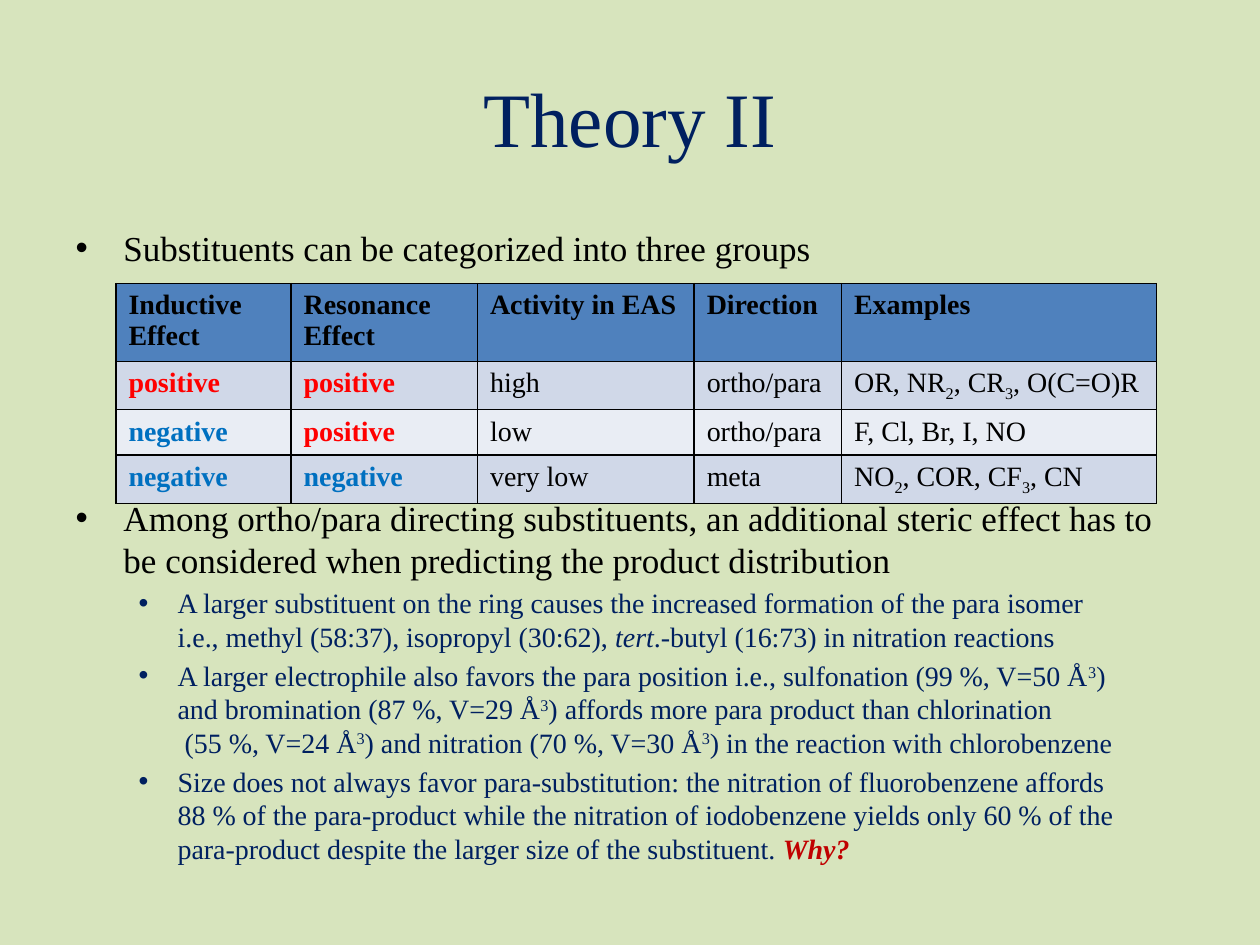
from pptx import Presentation
from pptx.dml.color import RGBColor
from pptx.enum.text import MSO_ANCHOR, MSO_AUTO_SIZE, PP_ALIGN
from pptx.oxml import parse_xml
from pptx.oxml.ns import nsdecls
from pptx.util import Inches, Pt

FONT = "Times New Roman"
BACKGROUND = RGBColor(0xD7, 0xE4, 0xBD)
NAVY = RGBColor(0x00, 0x20, 0x60)
BLACK = RGBColor(0x00, 0x00, 0x00)
DARK_RED = RGBColor(0xC0, 0x00, 0x00)
HEADER_BLUE = RGBColor(0x4F, 0x81, 0xBD)
BANDS = (RGBColor(0xD0, 0xD8, 0xE8), RGBColor(0xE9, 0xED, 0xF4))
EFFECT_COLORS = {"positive": RGBColor(0xFF, 0x00, 0x00),
                 "negative": RGBColor(0x00, 0x70, 0xC0)}

SUB, SUPER = {"baseline": -25}, {"baseline": 30}
CUBED = ("3", SUPER)

HEADERS = ["Inductive Effect", "Resonance Effect", "Activity in EAS", "Direction", "Examples"]
GROUPS = [
    ["positive", "positive", "high", "ortho/para",
     ["OR, NR", ("2", SUB), ", CR", ("3", SUB), ", O(C=O)R"]],
    ["negative", "positive", "low", "ortho/para", "F, Cl, Br, I, NO"],
    ["negative", "negative", "very low", "meta",
     ["NO", ("2", SUB), ", COR, CF", ("3", SUB), ", CN"]],
]
COLUMN_WIDTHS = (1.39, 1.48, 1.72, 1.17, 2.5)
ROW_HEIGHTS = (0.62, 0.36, 0.36, 0.36)

# Level, space before in points, content
TABLE_GAP = 130
BULLETS = [
    (0, 4, "Substituents can be categorized into three groups"),
    (0, TABLE_GAP, "Among ortho/para directing substituents, an additional steric effect has to "
                   "be considered when predicting the product distribution"),
    (1, 3.2, ["A larger substituent on the ring causes the increased formation of the para isomer \n"
              "i.e., methyl (58:37), isopropyl (30:62), ", ("tert", {"italic": True}),
              ".-butyl (16:73) in nitration reactions"]),
    (1, 3.2, ["A larger electrophile also favors the para position i.e., sulfonation (99 %, V=50 Å",
              CUBED, ") \nand bromination (87 %, V=29 Å", CUBED,
              ") affords more para product than chlorination\n (55 %, V=24 Å", CUBED,
              ") and nitration (70 %, V=30 Å", CUBED, ") in the reaction with chlorobenzene"]),
    (1, 3.2, ["Size does not always favor para-substitution: the nitration of fluorobenzene affords \n"
              "88 % of the para-product while the nitration of iodobenzene yields only 60 % of the \n"
              "para-product despite the larger size of the substituent. ",
              ("Why?", {"color": DARK_RED, "bold": True, "italic": True})]),
]
# Size, line pitch, colour, left margin and hanging indent for each level
LEVELS = [(20, 24, BLACK, 0.38, -0.38), (16, 19.15, NAVY, 0.81, -0.31)]


def add_text(paragraph, text, size=16, color=BLACK, bold=False, italic=False, baseline=None):
    for number, line in enumerate(text.split("\n")):
        if number:
            paragraph.add_line_break()
        if not line:
            continue
        run = paragraph.add_run()
        run.text = line
        font = run.font
        font.name, font.size, font.bold, font.italic = FONT, Pt(size), bold, italic
        font.color.rgb = color
        if baseline:
            run._r.get_or_add_rPr().set("baseline", str(baseline * 1000))


def add_pieces(paragraph, content, **style):
    """Add a string, or a list of strings and (text, format) pairs."""
    for piece in [content] if isinstance(content, str) else content:
        text, extra = (piece, {}) if isinstance(piece, str) else piece
        add_text(paragraph, text, **{**style, **extra})


def place(shape, left, top, width, height):
    shape.left, shape.top = Inches(left), Inches(top)
    shape.width, shape.height = Inches(width), Inches(height)


def set_bullet(paragraph, margin, indent):
    properties = paragraph._p.get_or_add_pPr()
    properties.set("marL", str(Inches(margin)))
    properties.set("indent", str(Inches(indent)))
    properties.append(parse_xml(f'<a:buFont {nsdecls("a")} typeface="Arial"/>'))
    properties.append(parse_xml(f'<a:buChar {nsdecls("a")} char="•"/>'))


def set_borders(cell):
    properties = cell._tc.get_or_add_tcPr()
    for position, side in enumerate(("lnL", "lnR", "lnT", "lnB")):
        properties.insert(position, parse_xml(
            f'<a:{side} {nsdecls("a")} w="{Pt(1)}"><a:solidFill>'
            f'<a:srgbClr val="{BLACK}"/></a:solidFill></a:{side}>'))


def fill_title(title, box):
    place(title, *box)
    frame = title.text_frame
    frame.vertical_anchor = MSO_ANCHOR.MIDDLE
    frame.paragraphs[0].alignment = PP_ALIGN.CENTER
    add_text(frame.paragraphs[0], "Theory II", size=44, color=NAVY)


def fill_body(body, box):
    place(body, *box)
    frame = body.text_frame
    frame.word_wrap = True
    frame.auto_size = MSO_AUTO_SIZE.NONE
    for number, (level, space, content) in enumerate(BULLETS):
        paragraph = frame.add_paragraph() if number else frame.paragraphs[0]
        size, pitch, color, margin, indent = LEVELS[level]
        paragraph.level = level
        paragraph.line_spacing = Pt(pitch)
        paragraph.space_before = Pt(space)
        set_bullet(paragraph, margin, indent)
        add_pieces(paragraph, content, size=size, color=color)


def add_groups_table(slide, box):
    rows = [HEADERS] + GROUPS
    table = slide.shapes.add_table(len(rows), len(HEADERS), *map(Inches, box)).table
    for column, width in zip(table.columns, COLUMN_WIDTHS):
        column.width = Inches(width)
    for row, height in zip(table.rows, ROW_HEIGHTS):
        row.height = Inches(height)
    for row_number, contents in enumerate(rows):
        is_header = row_number == 0
        for column_number, content in enumerate(contents):
            cell = table.cell(row_number, column_number)
            cell.fill.solid()
            cell.fill.fore_color.rgb = HEADER_BLUE if is_header else BANDS[(row_number - 1) % 2]
            set_borders(cell)
            is_effect = column_number < 2 and not is_header
            add_pieces(cell.text_frame.paragraphs[0], content, bold=is_header or is_effect,
                       color=EFFECT_COLORS[content] if is_effect else BLACK)


def main():
    presentation = Presentation()
    presentation.slide_width, presentation.slide_height = Inches(10), Inches(7.5)
    slide = presentation.slides.add_slide(presentation.slide_layouts[1])
    slide.background.fill.solid()
    slide.background.fill.fore_color.rgb = BACKGROUND
    fill_title(slide.shapes.title, (0.5, 0.3, 9, 1.25))
    fill_body(slide.placeholders[1], (0.5, 1.75, 9, 4.95))
    add_groups_table(slide, (0.92, 2.25, 8.25, 1.73))
    presentation.save("out.pptx")


if __name__ == "__main__":
    main()
